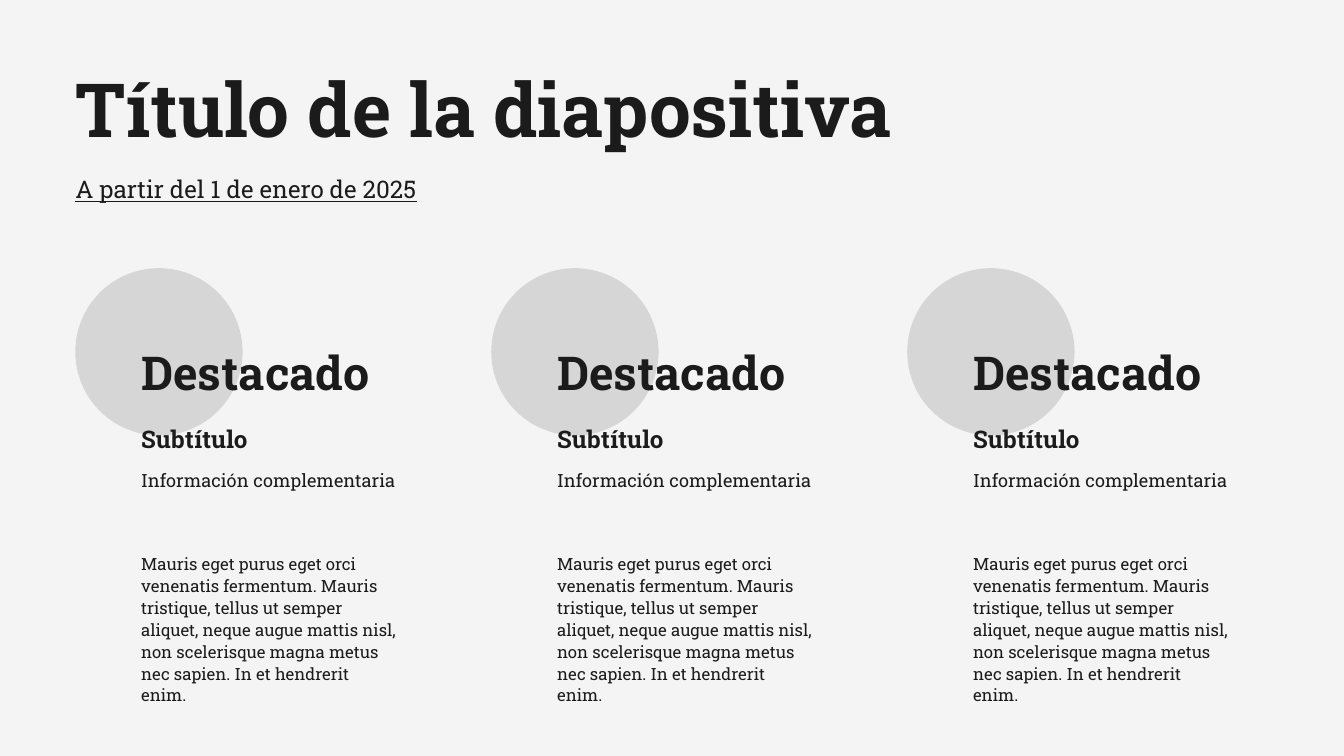
"""Build a title slide with three highlighted columns."""
from dataclasses import dataclass

from pptx import Presentation
from pptx.dml.color import RGBColor
from pptx.enum import shapes, text
from pptx.shapes.base import BaseShape
from pptx.slide import Slide
from pptx.util import Inches, Pt

PAPER = RGBColor(0xF4, 0xF4, 0xF4)
INK = RGBColor(0x1B, 0x1B, 0x1B)
DISC = RGBColor(0xD6, 0xD6, 0xD6)

FONT = "Roboto Slab"
MARGIN = 1.12
COLUMNS = 3
PITCH = 6.19
TEXT_INDENT = 0.98
TEXT_WIDTH = 3.8
HEADER_WIDTH = 12.22
DISC_TOP = 3.99
DISC_SIZE = 2.49


@dataclass(frozen=True)
class TextBlock:
    words: str
    top: float
    height: float
    size: float
    leading: float
    bold: bool = False
    underline: bool = False


TITLE = TextBlock("Título de la diapositiva", 0.93, 1.53, 80, 96, bold=True)
DATE = TextBlock("A partir del 1 de enero de 2025", 2.56, 0.51, 26, 33.8, underline=True)
COLUMN_BLOCKS = (
    TextBlock(
        "Mauris eget purus eget orci venenatis fermentum. Mauris tristique, "
        "tellus ut semper aliquet, neque augue mattis nisl, non scelerisque "
        "magna metus nec sapien. In et hendrerit enim.",
        8.22, 1.97, 18, 23.4,
    ),
    TextBlock("Destacado", 5.12, 0.95, 50, 60, bold=True),
    TextBlock("Subtítulo", 6.27, 0.51, 26, 33.8, bold=True),
    TextBlock("Información complementaria", 6.96, 0.38, 19.5, 25.4),
)


def apply(target: object, values: dict) -> None:
    for name, value in values.items():
        setattr(target, name, value)


def write(box: BaseShape, block: TextBlock, left: float, width: float) -> None:
    apply(box, {
        "left": Inches(left), "top": Inches(block.top),
        "width": Inches(width), "height": Inches(block.height),
    })
    frame = box.text_frame
    apply(frame, {
        "margin_left": 0, "margin_top": 0, "margin_right": 0, "margin_bottom": 0,
        "word_wrap": True,
        "auto_size": text.MSO_AUTO_SIZE.SHAPE_TO_FIT_TEXT,
        "vertical_anchor": text.MSO_ANCHOR.TOP,
    })
    para = frame.paragraphs[0]
    apply(para, {
        "alignment": text.PP_ALIGN.LEFT, "line_spacing": Pt(block.leading),
        "space_before": Pt(0), "space_after": Pt(0),
    })
    span = para.add_run()
    span.text = block.words
    apply(span.font, {
        "name": FONT, "size": Pt(block.size),
        "bold": block.bold, "underline": block.underline,
    })
    span.font.color.rgb = INK


def add_column(page: Slide, left: float) -> None:
    disc = page.shapes.add_shape(
        shapes.MSO_SHAPE.OVAL, Inches(left), Inches(DISC_TOP),
        Inches(DISC_SIZE), Inches(DISC_SIZE),
    )
    disc.shadow.inherit = False
    disc.fill.solid()
    disc.fill.fore_color.rgb = DISC
    disc.line.fill.background()
    group = page.shapes.add_group_shape()
    for block in COLUMN_BLOCKS:
        box = group.shapes.add_textbox(
            Inches(left + TEXT_INDENT), Inches(block.top),
            Inches(TEXT_WIDTH), Inches(block.height),
        )
        write(box, block, left + TEXT_INDENT, TEXT_WIDTH)


def main() -> None:
    deck = Presentation()
    apply(deck, {"slide_width": Inches(20), "slide_height": Inches(11.25)})
    page = deck.slides.add_slide(deck.slide_layouts[0])
    page.background.fill.solid()
    page.background.fill.fore_color.rgb = PAPER
    for box, block in zip(page.placeholders, (TITLE, DATE)):
        write(box, block, MARGIN, HEADER_WIDTH)
    for index in range(COLUMNS):
        add_column(page, MARGIN + index * PITCH)
    deck.save("out.pptx")


if __name__ == "__main__":
    main()
